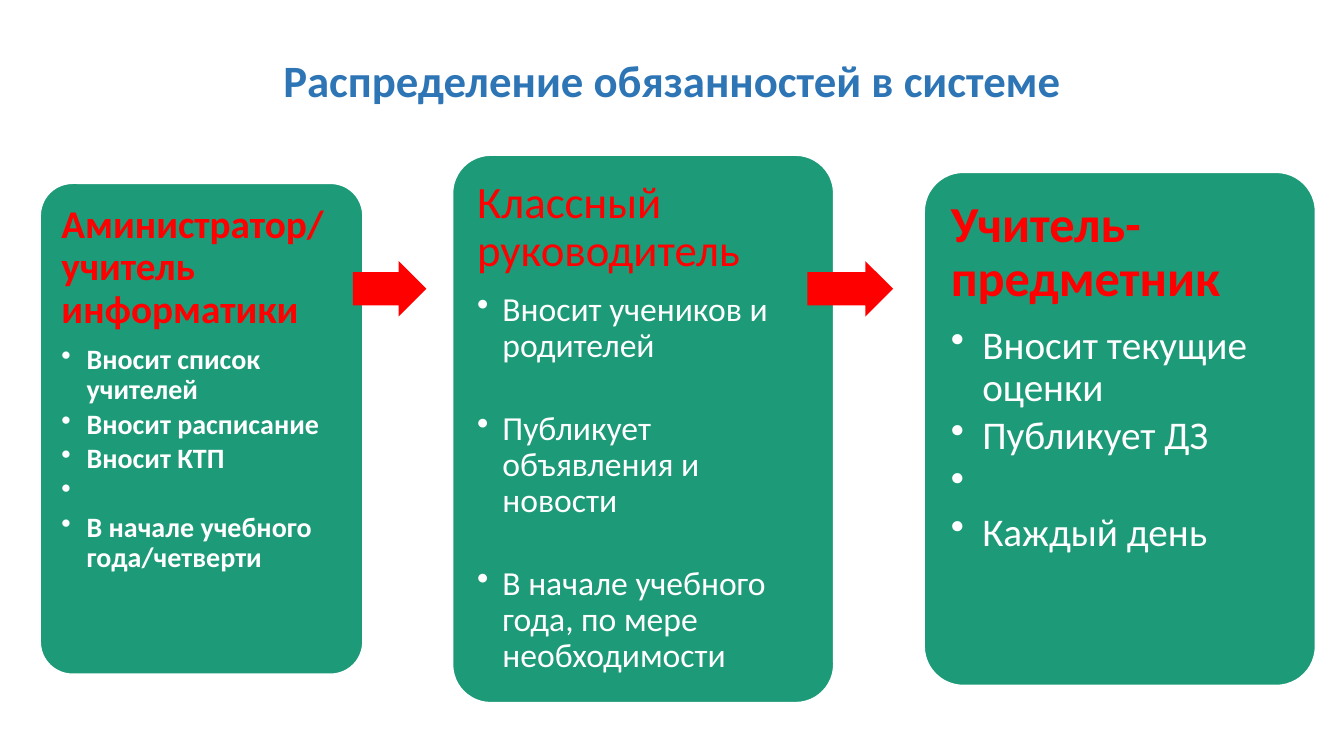
from lxml import etree
from pptx import Presentation
from pptx import util as u
from pptx.dml.color import RGBColor
from pptx.enum import shapes, text
from pptx.oxml.ns import qn

Pt = u.Pt
FONT = "Calibri"
COLORS = {"card": "1D9A78", "accent": "FF0000", "title": "2E75B6", "white": "FFFFFF"}
ARROW_TOP, ARROW_HEIGHT = 186.5, 39.6

# box, heading size, indent, gap after each duty, heading bold, duties bold, heading, duties
CARDS = [
    ((28.8, 131, 230.4, 350.6), 28, 18, 3, True, True,
     "Аминистратор/ учитель информатики",
     ["Вносит список учителей", "Вносит расписание", "Вносит КТП", " ",
      "В начале учебного года/четверти"]),
    ((323.3, 110.9, 272.2, 391), 32, 18, 33, False, False,
     "Классный руководитель",
     ["Вносит учеников и родителей", "Публикует объявления и новости",
      "В начале учебного года, по мере необходимости"]),
    ((660.2, 123.1, 279.4, 366.5), 36, 22.5, 4.2, True, False,
     "Учитель-предметник",
     ["Вносит текущие оценки", "Публикует ДЗ", " ", "Каждый день"]),
]
ARROWS = [(252, 52.6), (576.7, 61.2)]  # left, width


def rgb(name):
    return RGBColor.from_string(COLORS[name])


def add_run(p, content, size, color, bold):
    r = p.add_run()
    r.text = content
    r.font.name = FONT
    r.font.size = Pt(size)
    r.font.bold = bold
    r.font.color.rgb = rgb(color)


def add_bullet(p, indent):
    p.level = 1
    pPr = p._p.get_or_add_pPr()
    pPr.set("marL", str(Pt(indent)))
    pPr.set("indent", str(-Pt(indent)))
    etree.SubElement(pPr, qn("a:buChar")).set("char", "•")


def add_block(s, kind, box, fill, adjustments):
    sp = s.shapes.add_shape(kind, *map(Pt, box))
    sp.shadow.inherit = False
    sp.fill.solid()
    sp.fill.fore_color.rgb = rgb(fill)
    sp.line.fill.background()
    for i, value in enumerate(adjustments):
        sp.adjustments[i] = value
    return sp


def add_card(s, box, size, indent, gap, head_bold, duty_bold, heading, duties):
    sp = add_block(s, shapes.MSO_SHAPE.ROUNDED_RECTANGLE, box, "card", [0.1])
    sp.line.color.rgb = rgb("white")
    sp.line.width = Pt(1)
    tf = sp.text_frame
    tf.word_wrap = True
    tf.vertical_anchor = text.MSO_ANCHOR.TOP
    tf.margin_left = tf.margin_top = tf.margin_right = tf.margin_bottom = Pt(0.3 * size)

    p = tf.paragraphs[0]
    p.alignment = text.PP_ALIGN.LEFT
    p.line_spacing = 0.9
    p.space_after = Pt(0.35 * size)
    add_run(p, heading, size, "accent", head_bold)
    for duty in duties:
        p = tf.add_paragraph()
        p.alignment = text.PP_ALIGN.LEFT
        p.line_spacing = 0.9
        p.space_after = Pt(gap)
        add_bullet(p, indent)
        add_run(p, duty, size - 8, "white", duty_bold)


def add_arrow(s, left, width):
    box = (left, ARROW_TOP, width, ARROW_HEIGHT)
    add_block(s, shapes.MSO_SHAPE.RIGHT_ARROW, box, "accent", [0.6, 0.5])


def add_title(s, content):
    tf = s.shapes.add_textbox(Pt(66.2), Pt(28.8), Pt(828), Pt(61.2)).text_frame
    tf.word_wrap = True
    tf.vertical_anchor = text.MSO_ANCHOR.MIDDLE
    p = tf.paragraphs[0]
    p.alignment = text.PP_ALIGN.CENTER
    p.line_spacing = 0.9
    add_run(p, content, 32, "title", True)


def main():
    prs = Presentation()
    prs.slide_width, prs.slide_height = Pt(960), Pt(540)
    s = prs.slides.add_slide(prs.slide_layouts[6])
    for card in CARDS:
        add_card(s, *card)
    for arrow in ARROWS:
        add_arrow(s, *arrow)
    add_title(s, "Распределение обязанностей в системе")
    prs.save("out.pptx")


if __name__ == "__main__":
    main()
